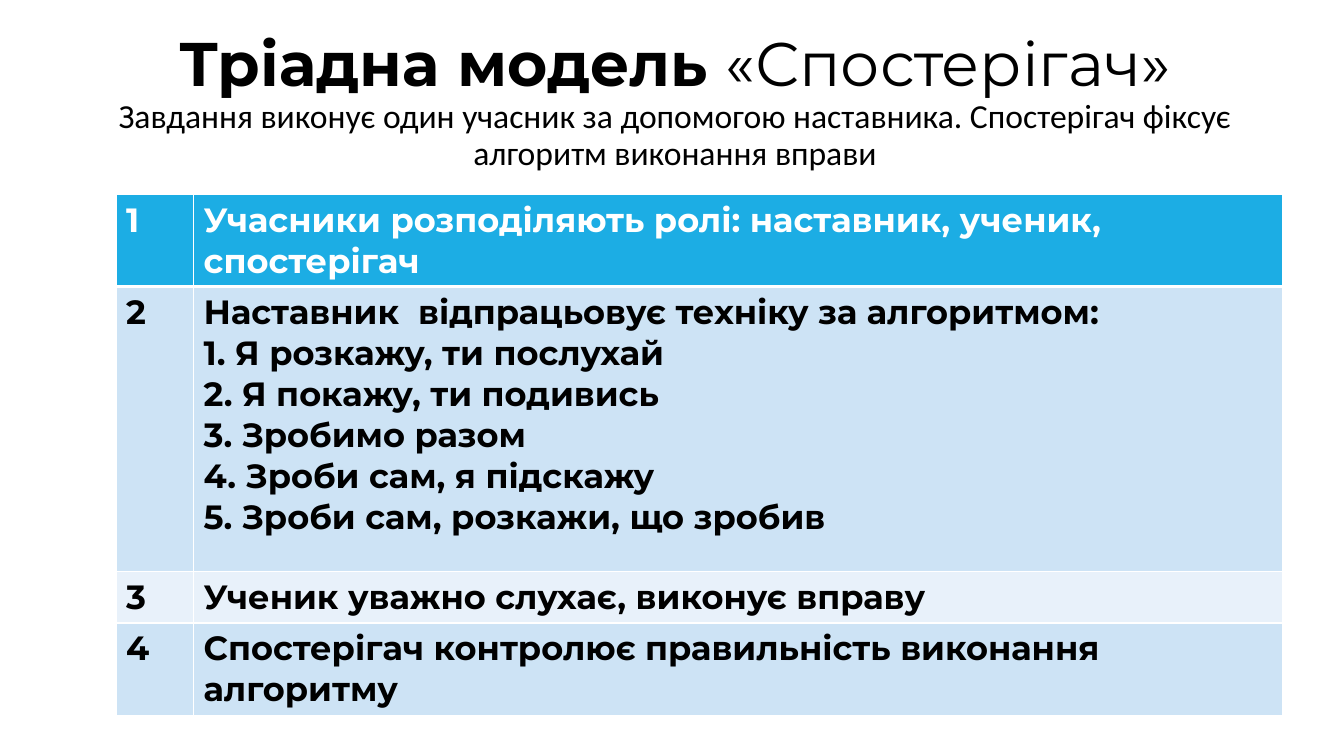
from dataclasses import dataclass

from lxml.etree import SubElement
from pptx import Presentation
from pptx.dml.color import RGBColor as Color
from pptx.enum.text import MSO_ANCHOR as Anchor, MSO_AUTO_SIZE as AutoSize, PP_ALIGN as Align
from pptx.oxml.ns import qn
from pptx.util import Pt

PX = 9144


@dataclass(frozen=True)
class Theme:
    heading_font: str = "Montserrat"
    body_font: str = "Calibri"
    heading_size: int = 44
    text_size: int = 24
    ink: str = "000000"
    white: str = "FFFFFF"
    header: str = "1CADE4"
    band_dark: str = "CDE3F5"
    band_light: str = "E8F1FA"
    border: int = 1
    header_border: int = 3


THEME = Theme()
TITLE_BOX = (52, 16, 1235, 172)
TABLE_BOX = (115, 193, 1157, 508)
COLUMN_WIDTHS = (77, 1080)
ROW_HEIGHTS = (88, 283, 49, 88)
TITLE = "Тріадна модель "
ROLE = "«Спостерігач»"
SUBTITLE = (
    "Завдання виконує один учасник за допомогою наставника. "
    "Спостерігач фіксує алгоритм виконання вправи"
)
STEPS = (
    ("Учасники розподіляють ролі: наставник, ученик, спостерігач",),
    (
        "Наставник  відпрацьовує техніку за алгоритмом:",
        "1. Я розкажу, ти послухай",
        "2. Я покажу, ти подивись",
        "3. Зробимо разом",
        "4. Зроби сам, я підскажу",
        "5. Зроби сам, розкажи, що зробив",
    ),
    ("Ученик уважно слухає, виконує вправу",),
    ("Спостерігач контролює правильність виконання алгоритму",),
)


def px(*lengths):
    return [length * PX for length in lengths]


def apply(target, values):
    for name, value in values.items():
        setattr(target, name, value)


def add_run(paragraph, text, font, size, color, bold):
    run = paragraph.add_run()
    run.text = text
    apply(run.font, {"name": font, "size": Pt(size), "bold": bold})
    run.font.color.rgb = Color.from_string(color)


def fill_title(title):
    left, top, width, height = px(*TITLE_BOX)
    apply(title, {"left": left, "top": top, "width": width, "height": height})
    frame = title.text_frame
    apply(frame, {"word_wrap": True, "auto_size": AutoSize.NONE, "vertical_anchor": Anchor.MIDDLE})
    paragraph = frame.paragraphs[0]
    apply(paragraph, {"alignment": Align.CENTER, "line_spacing": 0.9})
    add_run(paragraph, TITLE, THEME.heading_font, THEME.heading_size, THEME.ink, True)
    add_run(paragraph, ROLE, THEME.heading_font, THEME.heading_size, THEME.ink, False)
    paragraph.add_line_break()
    add_run(paragraph, SUBTITLE, THEME.body_font, THEME.text_size, THEME.ink, False)


def set_borders(cell, top, bottom):
    properties = cell._tc.get_or_add_tcPr()
    widths = {"L": THEME.border, "R": THEME.border, "T": top, "B": bottom}
    for side, width in widths.items():
        line = SubElement(properties, qn(f"a:ln{side}"), w=str(Pt(width)))
        fill = SubElement(line, qn("a:solidFill"))
        SubElement(fill, qn("a:srgbClr"), val=THEME.white)


def fill_cell(cell, lines, background, color):
    cell.fill.solid()
    cell.fill.fore_color.rgb = Color.from_string(background)
    frame = cell.text_frame
    for index, text in enumerate(lines):
        paragraph = frame.add_paragraph() if index else frame.paragraphs[0]
        add_run(paragraph, text, THEME.heading_font, THEME.text_size, color, True)


def add_steps_table(slide):
    frame = slide.shapes.add_table(len(STEPS), len(COLUMN_WIDTHS), *px(*TABLE_BOX))
    table = frame.table
    for column, width in zip(table.columns, px(*COLUMN_WIDTHS)):
        column.width = width
    for row, height in zip(table.rows, px(*ROW_HEIGHTS)):
        row.height = height
    for index, lines in enumerate(STEPS):
        band = THEME.band_dark if index % 2 else THEME.band_light
        background = band if index else THEME.header
        color = THEME.ink if index else THEME.white
        top = THEME.header_border if index == 1 else THEME.border
        bottom = THEME.border if index else THEME.header_border
        for cell, content in zip(table.rows[index].cells, ((str(index + 1),), lines)):
            set_borders(cell, top, bottom)
            fill_cell(cell, content, background, color)


def main():
    presentation = Presentation()
    width, height = px(1333, 750)
    apply(presentation, {"slide_width": width, "slide_height": height})
    slide = presentation.slides.add_slide(presentation.slide_layouts[5])
    fill_title(slide.shapes.title)
    add_steps_table(slide)
    presentation.save("out.pptx")


if __name__ == "__main__":
    main()
